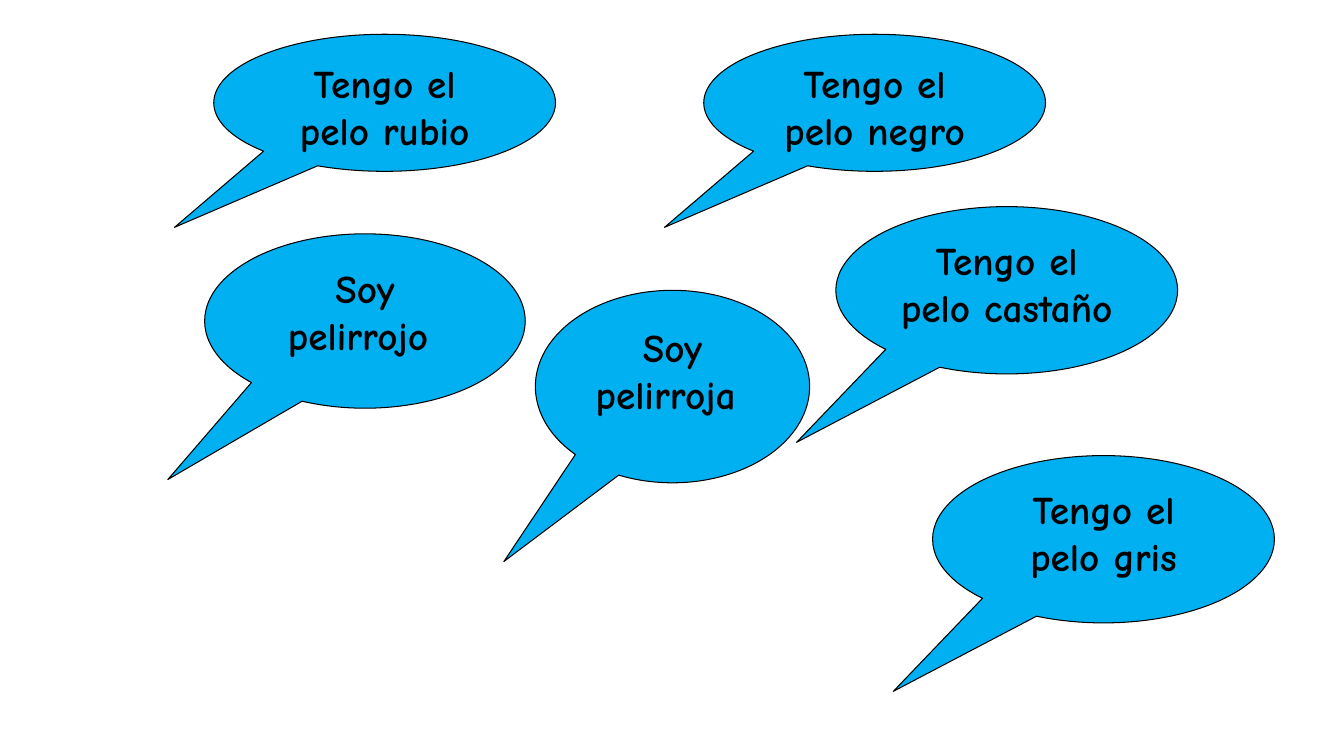
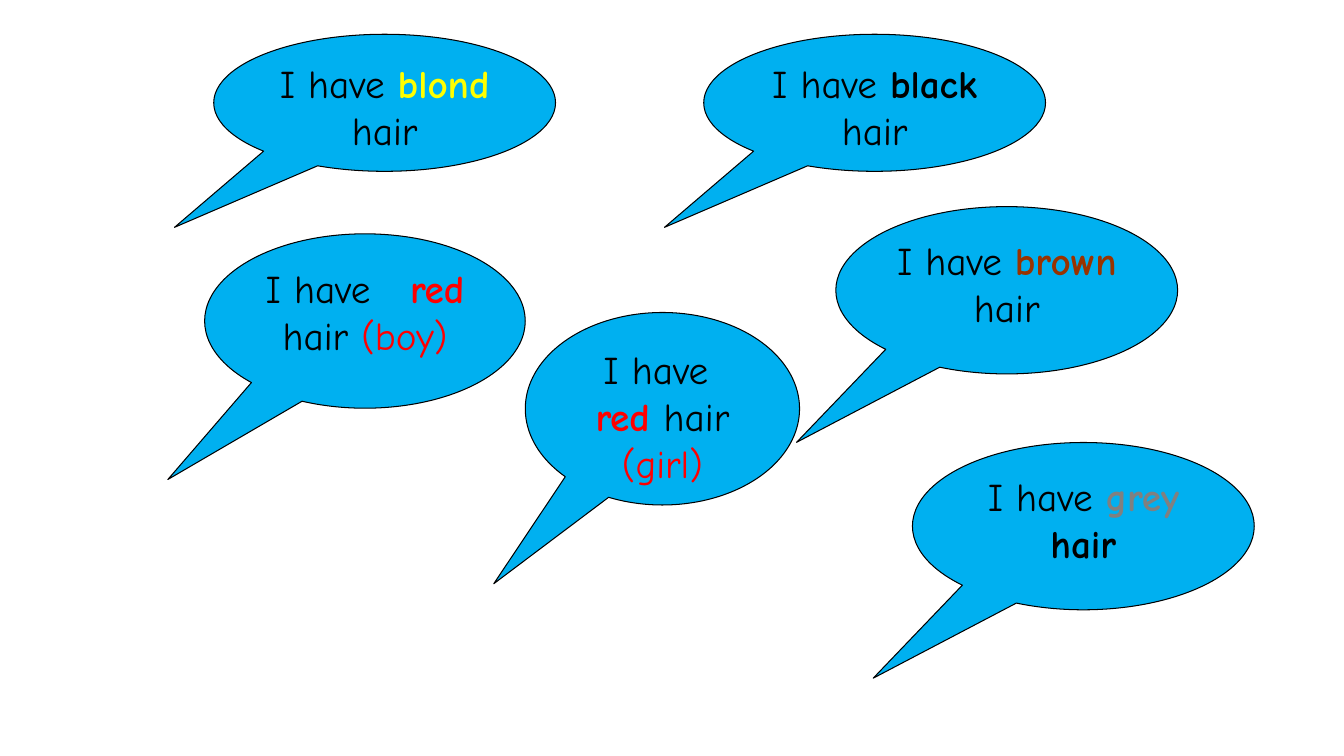
from pptx import Presentation
from pptx.dml.color import RGBColor
from pptx.enum.shapes import MSO_SHAPE
from pptx.enum.text import MSO_ANCHOR, PP_ALIGN
from pptx.util import Pt

PX = 9144  # EMU per px, 100 px to the inch
FONT, SIZE = "Comic Neue", 28
TAIL = (-0.615, 0.909)
COLORS = {
    "bubble": "00B0F0", "text": "000000", "blond": "FFFF00",
    "brown": "993300", "red": "FF0000", "grey": "808080",
}

# Bubble frames: left, top, width, height in px
FRAMES = {
    "black": (698, 34, 339, 136),
    "blond": (212, 34, 339, 136),
    "brown": (829, 205, 339, 166),
    "boy": (203, 232, 318, 173),
    "girl": (531, 288, 272, 191),
    "grey": (925, 452, 339, 166),
}
MOVED = {"girl": (521, 310, 272, 191), "grey": (905, 439, 339, 166)}

SPANISH = {
    "black": "Tengo el pelo negro",
    "blond": "Tengo el pelo rubio",
    "brown": "Tengo el pelo castaño",
    "boy": "Soy pelirrojo ",
    "girl": "Soy pelirroja ",
    "grey": "Tengo el pelo gris",
}

# Runs: text, colour, bold, extra letter spacing in hundredths of a point
START, HAIR = ("I have ", "text", False, 0), ("hair", "text", False, 0)
RED = ("red ", "red", True, 0)
BREAK = None
ENGLISH = {
    "black": [START, ("black ", "text", True, 0), HAIR],
    "blond": [START, ("blond ", "blond", True, 0), HAIR],
    "brown": [START, ("brown ", "brown", True, 0), HAIR],
    "boy": [("I have", "text", False, 0), (" ", "text", False, 1900),
            RED, HAIR, (" (boy)", "red", False, 0)],
    "girl": [START, BREAK, RED, HAIR, (" (girl)", "red", False, 0)],
    "grey": [START, ("grey ", "grey", True, 0), ("hair", "text", True, 0)],
}

SLIDES = [
    (FRAMES, {who: [(text, "text", True, 0)] for who, text in SPANISH.items()}),
    (FRAMES | MOVED, ENGLISH),
]


def rgb(name):
    return RGBColor.from_string(COLORS[name])


def add_run(p, text, color, bold, spacing):
    r = p.add_run()
    r.text = text
    r.font.name, r.font.size, r.font.bold = FONT, Pt(SIZE), bold
    r.font.color.rgb = rgb(color)
    if spacing:
        r.font._element.set("spc", str(spacing))


def add_bubble(s, frame, runs):
    sp = s.shapes.add_shape(MSO_SHAPE.OVAL_CALLOUT, *(v * PX for v in frame))
    sp.shadow.inherit = False
    for i, value in enumerate(TAIL):
        sp.adjustments[i] = value
    sp.fill.solid()
    sp.fill.fore_color.rgb = rgb("bubble")
    sp.line.color.rgb = rgb("text")
    sp.line.width = Pt(0.75)
    tf = sp.text_frame
    tf.word_wrap = True
    tf.vertical_anchor = MSO_ANCHOR.TOP
    p = tf.paragraphs[0]
    p.alignment = PP_ALIGN.CENTER
    for run in runs:
        if run is BREAK:
            p.add_line_break()
        else:
            add_run(p, *run)


def main():
    prs = Presentation()
    prs.slide_width, prs.slide_height = 1333 * PX, 750 * PX
    for frames, texts in SLIDES:
        s = prs.slides.add_slide(prs.slide_layouts[6])
        for who, runs in texts.items():
            add_bubble(s, frames[who], runs)
    prs.save("out.pptx")


if __name__ == "__main__":
    main()
